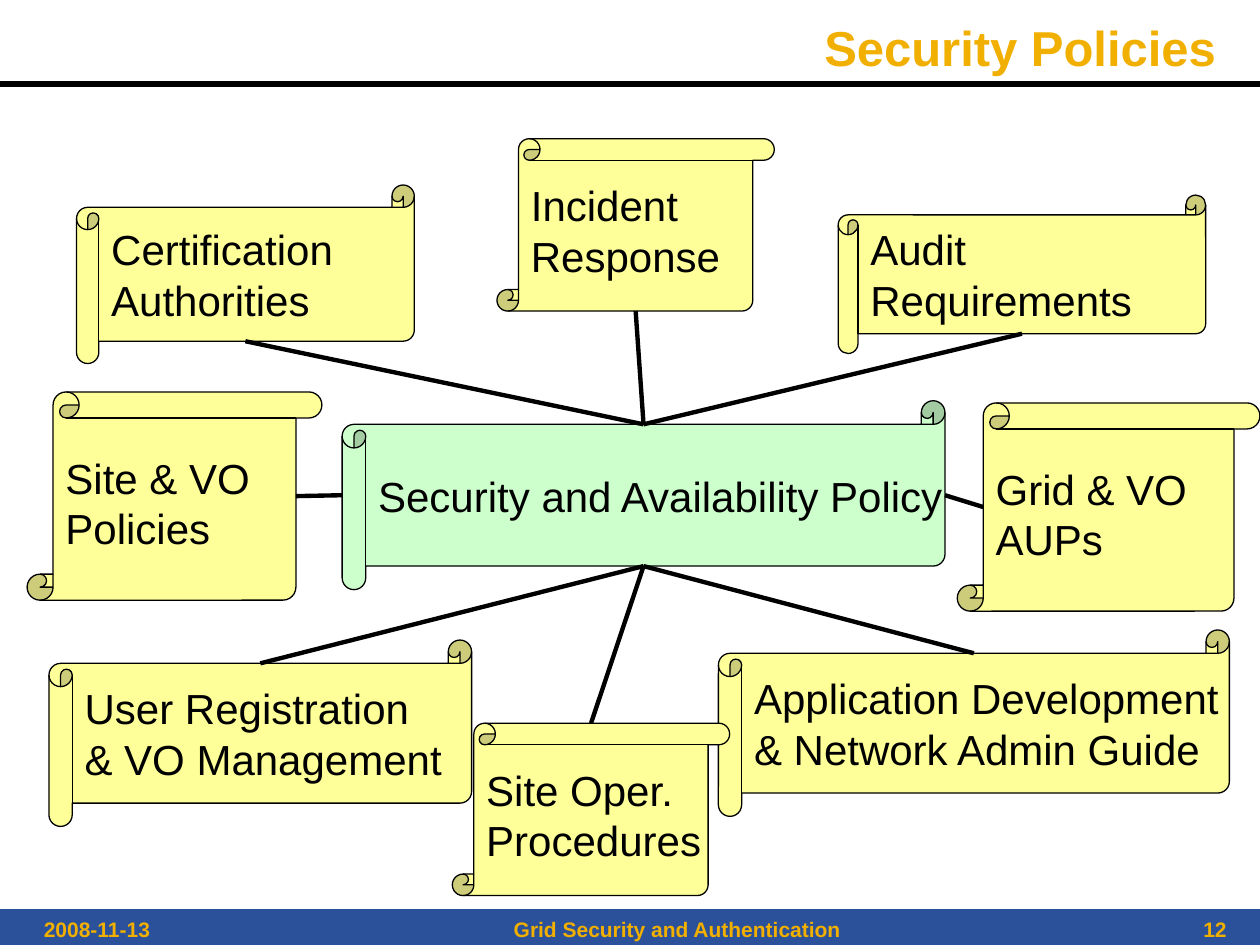
from lxml import etree
from pptx import Presentation
from pptx import util as u
from pptx.dml.color import RGBColor
from pptx.enum import shapes, text
from pptx.oxml import ns

FLAT = shapes.MSO_SHAPE.HORIZONTAL_SCROLL
TALL = shapes.MSO_SHAPE.VERTICAL_SCROLL
LEFT, MID, RIGHT = text.PP_ALIGN.LEFT, text.PP_ALIGN.CENTER, text.PP_ALIGN.RIGHT
GOLD, BLUE, BLACK, GREEN, CREAM = "F1AF00", "2B519A", "000000", "CCFFCC", "FFFF99"
CURL = 0.125


def paint(fill, shade):
    fill.solid()
    fill.fore_color.rgb = RGBColor.from_string(shade)


class Page:
    """Holds the slide and its shared text and line style."""
    font = "Arial"

    def __init__(self, slide):
        self.slide = slide

    def letter(self, frame, lines, size, shade, bold=False, align=LEFT):
        """Set one paragraph per line of words."""
        for i, line in enumerate(lines):
            para = frame.paragraphs[0] if i == 0 else frame.add_paragraph()
            para.alignment = align
            run = para.add_run()
            run.text = line
            run.font.name, run.font.size, run.font.bold = self.font, u.Pt(size), bold
            paint(run.font.fill, shade)

    def title(self, words, x, y, w, h):
        box = self.slide.shapes.title
        box.left, box.top, box.width, box.height = map(u.Pt, (x, y, w, h))
        box.text_frame.vertical_anchor = text.MSO_ANCHOR.MIDDLE
        self.letter(box.text_frame, [words], 28, GOLD, True, RIGHT)

    def label(self, words, x, y, w, h, align):
        box = self.slide.shapes.add_textbox(*map(u.Pt, (x, y, w, h)))
        box.text_frame.word_wrap = True
        self.letter(box.text_frame, [words], 12, GOLD, True, align)

    def shape(self, kind, x, y, w, h, shade):
        item = self.slide.shapes.add_shape(kind, *map(u.Pt, (x, y, w, h)))
        item.shadow.inherit = False
        paint(item.fill, shade)
        item.line.fill.background()
        return item

    def scroll(self, kind, x, y, w, h, lines, shade=CREAM):
        item = self.shape(kind, x, y, w, h, shade)
        item.adjustments[0] = CURL
        paint(item.line.fill, BLACK)
        item.line.width = u.Pt(0.75)
        frame = item.text_frame
        frame.word_wrap = False
        frame.vertical_anchor = text.MSO_ANCHOR.MIDDLE
        self.letter(frame, lines, 24, BLACK)
        return item

    def line(self, start, end, width):
        rule = self.slide.shapes.add_connector(
            shapes.MSO_CONNECTOR.STRAIGHT, *map(int, (*start, *end)))
        paint(rule.line.fill, BLACK)
        rule.line.width = u.Pt(width)
        etree.SubElement(rule._element.spPr, ns.qn("a:effectLst"))

    def link(self, hub, side, item, far):
        self.line(edge(hub, side), edge(item, far), 2.5)


def edge(item, side):
    """Middle of one side of the scroll's sheet, inside its curls."""
    curl = CURL * min(item.width, item.height)
    tall = item.auto_shape_type == TALL
    dx, dy = (curl, 0) if tall else (0, curl)
    left, right = item.left + dx, item.left + item.width - dx
    top, foot = item.top + dy, item.top + item.height - dy
    x, y = (left + right) / 2, (top + foot) / 2
    return {"left": (left, y), "right": (right, y),
            "top": (x, top), "foot": (x, foot)}[side]


def main():
    deck = Presentation()
    deck.slide_width, deck.slide_height = u.Pt(720), u.Pt(540)
    page = Page(deck.slides.add_slide(deck.slide_layouts[5]))

    page.shape(shapes.MSO_SHAPE.RECTANGLE, 0, 519.5, 720, 20.5, BLUE)
    page.line((u.Pt(720), u.Pt(48)), (0, u.Pt(48)), 3)
    page.title("Security Policies", 133, 6, 569, 42)
    for words, x, w, align in (("2008-11-13", 18, 102, LEFT),
                               ("Grid Security and Authentication", 126, 522, MID),
                               ("12", 654, 54, RIGHT)):
        page.label(words, x, 520, w, 18, align)

    hub = page.scroll(FLAT, 195.5, 229, 344.5, 108,
                      ["Security and Availability Policy"], GREEN)
    # kind, place, words, side of the hub, side of the scroll
    ring = (
        (TALL, (15.5, 224, 168.5, 119), ["Site & VO", "Policies"], "left", "right"),
        (FLAT, (43.75, 105.75, 193, 102), ["Certification", "Authorities"], "top", "foot"),
        (FLAT, (479, 111.5, 210, 90.5), ["Audit", "Requirements"], "top", "foot"),
        (TALL, (284, 79.25, 158.5, 98.5), ["Incident", "Response"], "top", "foot"),
        (FLAT, (28, 365.75, 241.5, 106.5),
         ["User Registration", "& VO Management"], "foot", "top"),
        (FLAT, (410.5, 360, 292, 106.5),
         ["Application Development", "& Network Admin Guide"], "foot", "top"),
        (TALL, (547, 230.25, 173, 119), ["Grid & VO", "AUPs"], "right", "left"),
        (TALL, (258.5, 413.25, 158.5, 98.5), ["Site Oper.", "Procedures"], "foot", "top"),
    )
    for kind, place, words, side, far in ring:
        item = page.scroll(kind, *place, words)
        page.link(hub, side, item, far)

    deck.save("out.pptx")


if __name__ == "__main__":
    main()
